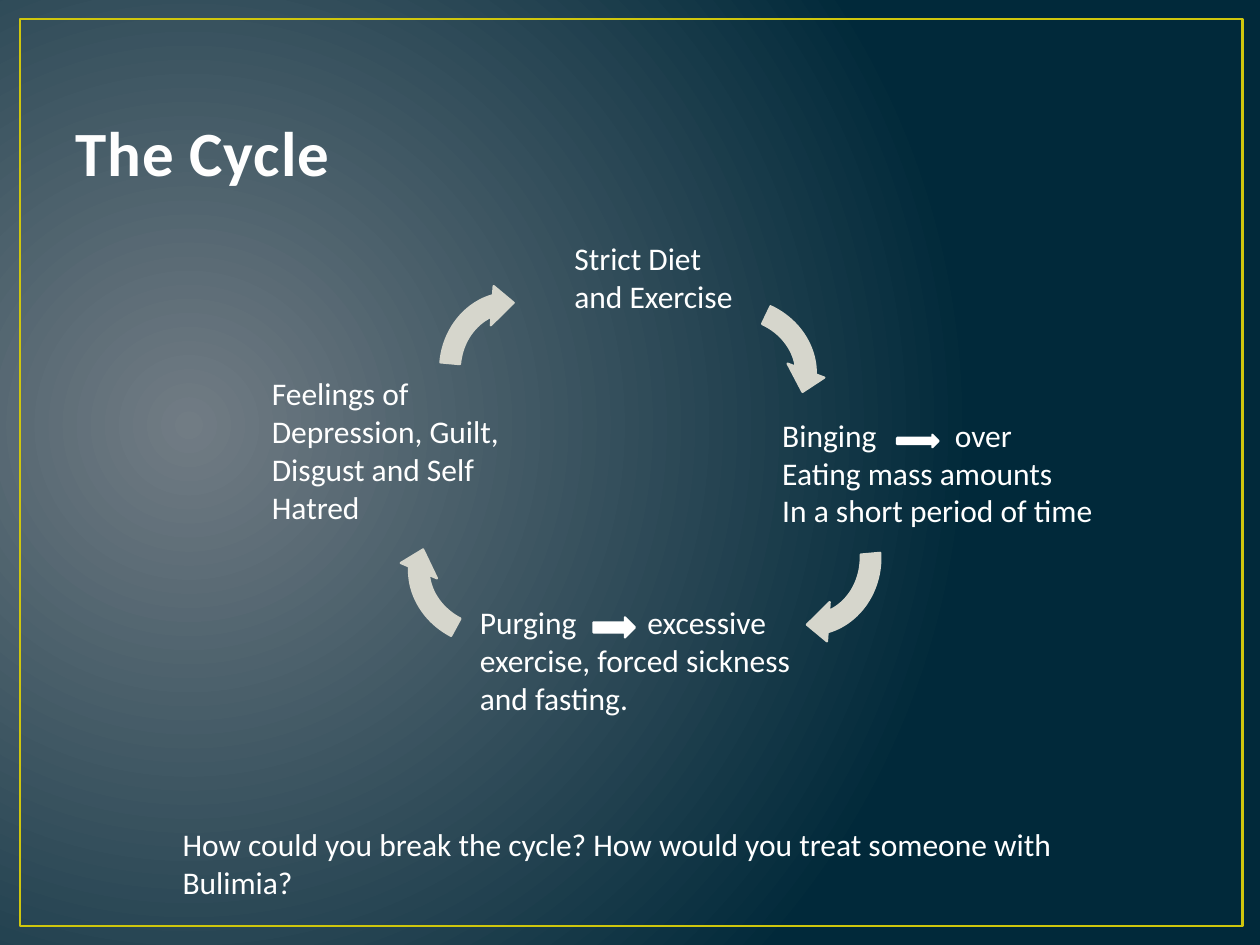
from pptx import Presentation
from pptx.dml.color import RGBColor
from pptx.enum import shapes, text
from pptx.oxml import ns, xmlchemy
from pptx.util import Inches, Pt

THEME = {
    "font": "Calibri", "title_size": 36, "body_size": 18,
    "title": "FEFEFE", "text": "FFFFFF", "cycle": "D6D6CC", "frame": "CFC60D",
    "glow": "717C84", "night": "01293A",
    "frame_line": 1.5, "arrow_line": 1.25,
}

TITLE = "The Cycle"
# Box (left, top, width, height), tab stop or None, paragraphs
LABELS = [
    ((4.46, 1.85, 1.58, 0.71), None, ["Strict Diet and Exercise"]),
    ((6.11, 3.25, 2.75, 1.01), 1.37,
     ["Binging\tover", "Eating mass amounts", "In a short period of time"]),
    ((3.71, 4.74, 2.75, 1.01), 1.33,
     ["Purging\texcessive exercise, forced sickness and fasting."]),
    ((2.06, 2.92, 2, 1.31), None,
     ["Feelings of Depression, Guilt, Disgust and Self Hatred"]),
    ((1.35, 6.5, 7.82, 0.4), None,
     ["How could you break the cycle? How would you treat someone with Bulimia?"]),
]
# Left, top, rotation, start angle of each bent arrow, clockwise
CYCLE_ARROWS = [
    (5.2, 2.3, 20.9, 164.73),
    (5.76, 3.81, 94, 156.64),
    (3.16, 3.94, 203, 165.17),
    (3.36, 2.3, 274.1, 162.66),
]
CYCLE_SIZE = (1.36, 1.25)
INLINE_ARROWS = [(7.12, 3.45, 0.33, 0.1), (4.71, 4.9, 0.33, 0.16)]


def color(name):
    return RGBColor.from_string(THEME[name])


def add_element(parent, tag, **attributes):
    element = xmlchemy.OxmlElement(tag)
    for name, value in attributes.items():
        element.set(name, str(value))
    parent.append(element)
    return element


def add_run(paragraph, words, size, color_name, bold=False):
    run = paragraph.add_run()
    run.text = words
    run.font.name = THEME["font"]
    run.font.size = Pt(THEME[size])
    run.font.bold = bold
    run.font.color.rgb = color(color_name)
    return run


def add_shape(slide, kind, box, line, width, fill=None):
    shape = slide.shapes.add_shape(kind, *map(Inches, box))
    shape.shadow.inherit = False
    if fill:
        shape.fill.solid()
        shape.fill.fore_color.rgb = color(fill)
    else:
        shape.fill.background()
    shape.line.color.rgb = color(line)
    shape.line.width = Pt(THEME[width])
    return shape


def add_label(slide, box, tab, lines):
    frame = slide.shapes.add_textbox(*map(Inches, box)).text_frame
    frame.word_wrap = True
    for index, line in enumerate(lines):
        paragraph = frame.add_paragraph() if index else frame.paragraphs[0]
        add_run(paragraph, line, "body_size", "text")
        if tab and "\t" in line:
            properties = paragraph._p.get_or_add_pPr()
            tabs = add_element(properties, "a:tabLst")
            add_element(tabs, "a:tab", pos=Inches(tab), algn="l")


def paint_background(slide):
    fill = slide.background.fill
    fill.gradient()
    for stop, name, position in zip(fill.gradient_stops, ("glow", "night"), (0, 1)):
        stop.color.rgb = color(name)
        stop.position = position
    # Radial glow left of the centre
    gradient = slide.element.find(".//" + ns.qn("a:gradFill"))
    gradient.remove(gradient.find(ns.qn("a:lin")))
    radial = add_element(gradient, "a:path", path="circle")
    add_element(radial, "a:fillToRect", l=15000, t=50000, r=85000, b=60000)


def add_title(slide):
    title = slide.shapes.title
    title.left, title.top, title.width, title.height = map(Inches, (0.5, 0.3, 9, 1.25))
    title.text_frame.vertical_anchor = text.MSO_ANCHOR.BOTTOM
    paragraph = title.text_frame.paragraphs[0]
    paragraph.alignment = text.PP_ALIGN.LEFT
    run = add_run(paragraph, TITLE, "title_size", "title", bold=True)
    run.font._element.set("spc", "50")


def main():
    presentation = Presentation()
    presentation.slide_width, presentation.slide_height = Inches(10), Inches(7.5)
    slide = presentation.slides.add_slide(presentation.slide_layouts[5])
    kinds = shapes.MSO_SHAPE

    # Background, frame and title
    paint_background(slide)
    add_shape(slide, kinds.RECTANGLE, (0.16, 0.15, 9.7, 7.2), "frame", "frame_line")
    add_title(slide)

    # Stages of the cycle and the closing question
    for box, tab, lines in LABELS:
        add_label(slide, box, tab, lines)

    # Bent arrows between the stages
    for left, top, rotation, start in CYCLE_ARROWS:
        arrow = add_shape(slide, kinds.CIRCULAR_ARROW, (left, top, *CYCLE_SIZE),
                          "cycle", "arrow_line", "cycle")
        arrow.rotation = rotation
        for index, value in enumerate((0.125, 11.42, 204.58, start, 0.125)):
            arrow.adjustments[index] = value

    # Small arrows inside the text
    for box in INLINE_ARROWS:
        add_shape(slide, kinds.RIGHT_ARROW, box, "text", "arrow_line", "text")

    presentation.save("out.pptx")


if __name__ == "__main__":
    main()
